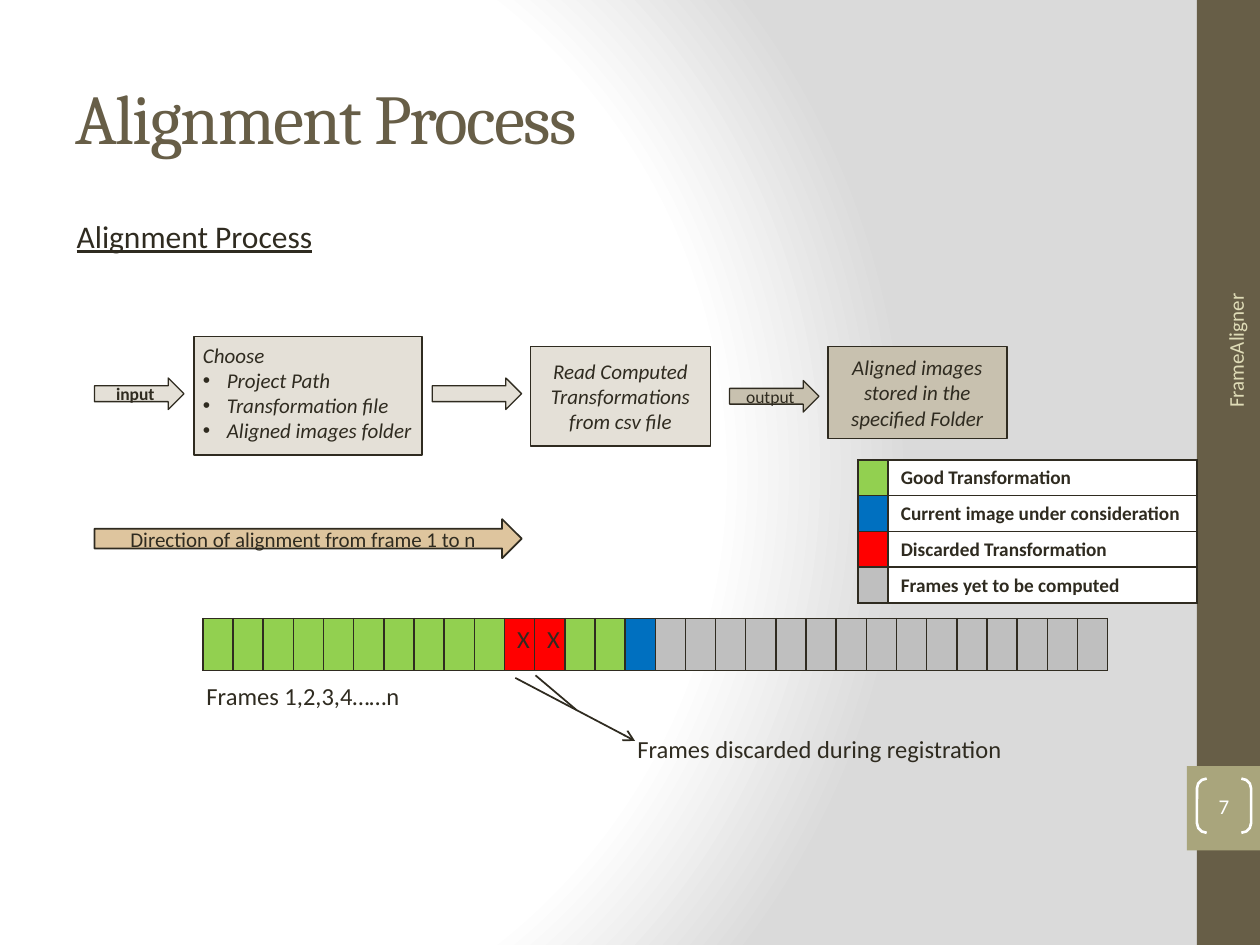
"""Build the Alignment Process slide with its flow, legend and frame strip."""
from lxml.etree import SubElement
from pptx import Presentation
from pptx.dml.color import RGBColor
from pptx.enum.shapes import MSO_CONNECTOR, MSO_SHAPE
from pptx.enum.text import MSO_ANCHOR, PP_ALIGN
from pptx.oxml import parse_xml
from pptx.oxml.ns import nsdecls, qn
from pptx.util import Inches, Pt

INK, WHITE, BROWN, OLIVE = "2F2B20", "FFFFFF", "675E47", "A9A57C"
SAND, STONE, TAN = "E4E0D7", "C8C1AF", "DEC59E"
GREEN, BLUE, RED, GREY = "92D050", "0070C0", "FF0000", "BFBFBF"
CENTER, MIDDLE = PP_ALIGN.CENTER, MSO_ANCHOR.MIDDLE
RECT, ARROW = MSO_SHAPE.RECTANGLE, MSO_SHAPE.RIGHT_ARROW

BACKGROUND_STOPS = [(0, WHITE), (75, WHITE), (100, "DADADA")]
SIDE_BANDS = [((9.5, 0, 0.5, 7.5), BROWN), ((9.42, 6.08, 0.58, 0.67), OLIVE)]

STEPS = [
    ((1.54, 2.67, 1.81, 0.94), SAND, PP_ALIGN.LEFT, 0.07, 0.05,
     ["Choose", "• Project Path", "• Transformation file", "• Aligned images folder"]),
    ((4.21, 2.75, 1.43, 0.79), SAND, CENTER, 0.04, 0,
     ["Read Computed Transformations from csv file"]),
    ((6.57, 2.75, 1.42, 0.73), STONE, CENTER, 0.02, 0,
     ["Aligned images stored in the specified Folder"]),
]
ARROWS = [
    ((0.75, 3, 0.71, 0.25), SAND, 0.75, "input", {"size": Pt(10), "bold": True}),
    ((3.43, 3, 0.71, 0.25), SAND, 0.75, "", {}),
    ((5.79, 3.02, 0.71, 0.25), STONE, 0.75, "output", {"size": Pt(10)}),
    ((0.75, 4.12, 3.39, 0.31), TAN, 1, "Direction of alignment from frame 1 to n", {"size": Pt(12)}),
]
LABELS = [
    ((0.51, 1.67, 2.36, 0.4), "Alignment Process", {"size": Pt(18), "underline": True}),
    ((1.54, 5.36, 4.02, 0.34), "Frames 1,2,3,4……n", {"size": Pt(14)}),
    ((4.96, 5.78, 4.76, 0.34), "Frames discarded during registration", {"size": Pt(14)}),
]
LEGEND = [
    (GREEN, "Good Transformation"),
    (BLUE, "Current image under consideration"),
    (RED, "Discarded Transformation"),
    (GREY, "Frames yet to be computed"),
]
FRAME_RUNS = [(GREEN, 10, ""), (RED, 2, "X"), (GREEN, 2, ""), (BLUE, 1, ""), (GREY, 15, "")]
DISCARD_LINES = [((4.09, 5.38), (5.04, 5.88), True), ((4.25, 5.36), (4.57, 5.63), False)]


def color(hex_code):
    return RGBColor.from_string(hex_code)


def inches(values):
    return [Inches(value) for value in values]


def write(frame, lines, font, ink=INK, align=PP_ALIGN.LEFT, face="Calibri"):
    for index, line in enumerate(lines):
        paragraph = frame.add_paragraph() if index else frame.paragraphs[0]
        paragraph.alignment = align
        if line.startswith("• "):
            properties = paragraph._p.get_or_add_pPr()
            properties.set("marL", str(Inches(0.19)))
            properties.set("indent", str(-Inches(0.19)))
            SubElement(properties, qn("a:buFont"), typeface="Arial")
            SubElement(properties, qn("a:buChar"), char="•")
        run = paragraph.add_run()
        run.text = line.removeprefix("• ")
        for name, value in {"name": face, **font}.items():
            setattr(run.font, name, value)
        run.font.color.rgb = color(ink)


def set_frame(frame, margins=None, anchor=MIDDLE):
    settings = {"word_wrap": True, "vertical_anchor": anchor}
    if margins is not None:
        sides = ("margin_left", "margin_right", "margin_top", "margin_bottom")
        settings.update(zip(sides, inches(margins)))
    for name, value in settings.items():
        setattr(frame, name, value)


def add_block(shapes, kind, box, fill=None, line=None, width=1):
    block = shapes.add_shape(kind, *inches(box))
    block.shadow.inherit = False
    if fill:
        block.fill.solid()
        block.fill.fore_color.rgb = color(fill)
    else:
        block.fill.background()
    if line:
        block.line.color.rgb = color(line)
        block.line.width = Pt(width)
    else:
        block.line.fill.background()
    return block


def add_label(shapes, box, text, font, ink=INK, anchor=MSO_ANCHOR.TOP):
    label = shapes.add_textbox(*inches(box))
    set_frame(label.text_frame, anchor=anchor)
    write(label.text_frame, [text], font, ink)
    return label


def add_grid(shapes, place, widths, row_height, rows, font, align=PP_ALIGN.LEFT):
    size = (sum(widths), row_height * len(rows))
    grid = shapes.add_table(len(rows), len(widths), *inches(place + size)).table
    grid.first_row = grid.horz_banding = False
    for column, width in zip(grid.columns, widths):
        column.width = Inches(width)
    for r, row in enumerate(rows):
        for c, (fill, text) in enumerate(row):
            cell = grid.cell(r, c)
            properties = cell._tc.get_or_add_tcPr()
            for side in ("lnL", "lnR", "lnT", "lnB"):
                border = SubElement(properties, qn(f"a:{side}"), w=str(Pt(1)))
                SubElement(SubElement(border, qn("a:solidFill")), qn("a:srgbClr"), val=INK)
            cell.fill.solid()
            cell.fill.fore_color.rgb = color(fill)
            if text:
                write(cell.text_frame, [text], font, align=align)
            else:
                points = str(int(font["size"].pt * 100))
                SubElement(cell.text_frame.paragraphs[0]._p, qn("a:endParaRPr"), sz=points)


def set_background(slide):
    stops = "".join(
        f'<a:gs pos="{position * 1000}"><a:srgbClr val="{shade}"/></a:gs>'
        for position, shade in BACKGROUND_STOPS)
    slide.background.fill.solid()
    properties = slide._element.cSld.bg.bgPr
    solid = properties.find(qn("a:solidFill"))
    properties.replace(solid, parse_xml(
        f'<a:gradFill {nsdecls("a")} rotWithShape="1"><a:gsLst>{stops}</a:gsLst>'
        '<a:path path="circle"><a:fillToRect l="20000" t="50000" r="100000" b="50000"/>'
        '</a:path></a:gradFill>'))


def add_title(slide):
    title = slide.shapes.title
    title.left, title.top, title.width, title.height = inches((0.5, 0.3, 8.58, 1.25))
    set_frame(title.text_frame)
    write(title.text_frame, ["Alignment Process"], {"size": Pt(40)}, BROWN, face="Cambria")
    title.text_frame.paragraphs[0].runs[0].font._element.set("spc", "-100")


def add_discard_line(shapes, start, end, has_head):
    pointer = shapes.add_connector(MSO_CONNECTOR.STRAIGHT, *inches(start + end))
    pointer.line.color.rgb = color(INK)
    pointer.line.width = Pt(1)
    if has_head:
        SubElement(pointer.line._get_or_add_ln(), qn("a:tailEnd"), type="arrow")
    SubElement(pointer._element.spPr, qn("a:effectLst"))


def main():
    deck = Presentation()
    deck.slide_width, deck.slide_height = Inches(10), Inches(7.5)
    slide = deck.slides.add_slide(deck.slide_layouts[5])
    shapes = slide.shapes
    set_background(slide)
    for box, fill in SIDE_BANDS:
        add_block(shapes, RECT, box, fill)
    add_title(slide)

    frames = [(fill, mark) for fill, count, mark in FRAME_RUNS for _ in range(count)]
    add_grid(shapes, (1.61, 4.91), [6.93 / len(frames)] * len(frames), 0.41,
             [frames], {"size": Pt(14)}, CENTER)
    for box, text, font in LABELS:
        add_label(shapes, box, text, font)
    for box, fill, align, side, bottom, lines in STEPS:
        step = add_block(shapes, RECT, box, fill, INK)
        set_frame(step.text_frame, (side, side, 0, bottom))
        write(step.text_frame, lines, {"size": Pt(12), "italic": True}, align=align)
    for box, fill, width, text, font in ARROWS:
        arrow = add_block(shapes, ARROW, box, fill, INK, width)
        set_frame(arrow.text_frame, (0, 0, 0, 0))
        if text:
            write(arrow.text_frame, [text], font, align=CENTER)
    for start, end, has_head in DISCARD_LINES:
        add_discard_line(shapes, start, end, has_head)
    add_grid(shapes, (6.81, 3.65), [0.23, 2.45], 0.28,
             [[(fill, ""), (WHITE, meaning)] for fill, meaning in LEGEND],
             {"size": Pt(11), "bold": True})

    footer = add_label(shapes, (8.47, 1.8, 2.67, 0.4), "FrameAligner",
                       {"size": Pt(12)}, "DFDCB7", MIDDLE)
    footer.rotation = 270
    page = add_block(shapes, MSO_SHAPE.DOUBLE_BRACKET, (9.5, 6.18, 0.43, 0.43), None, WHITE, 1.5)
    page.adjustments[0] = 0.18
    set_frame(page.text_frame, (0, 0, 0, 0))
    write(page.text_frame, ["7"], {"size": Pt(12)}, WHITE, CENTER)
    deck.save("out.pptx")


if __name__ == "__main__":
    main()
